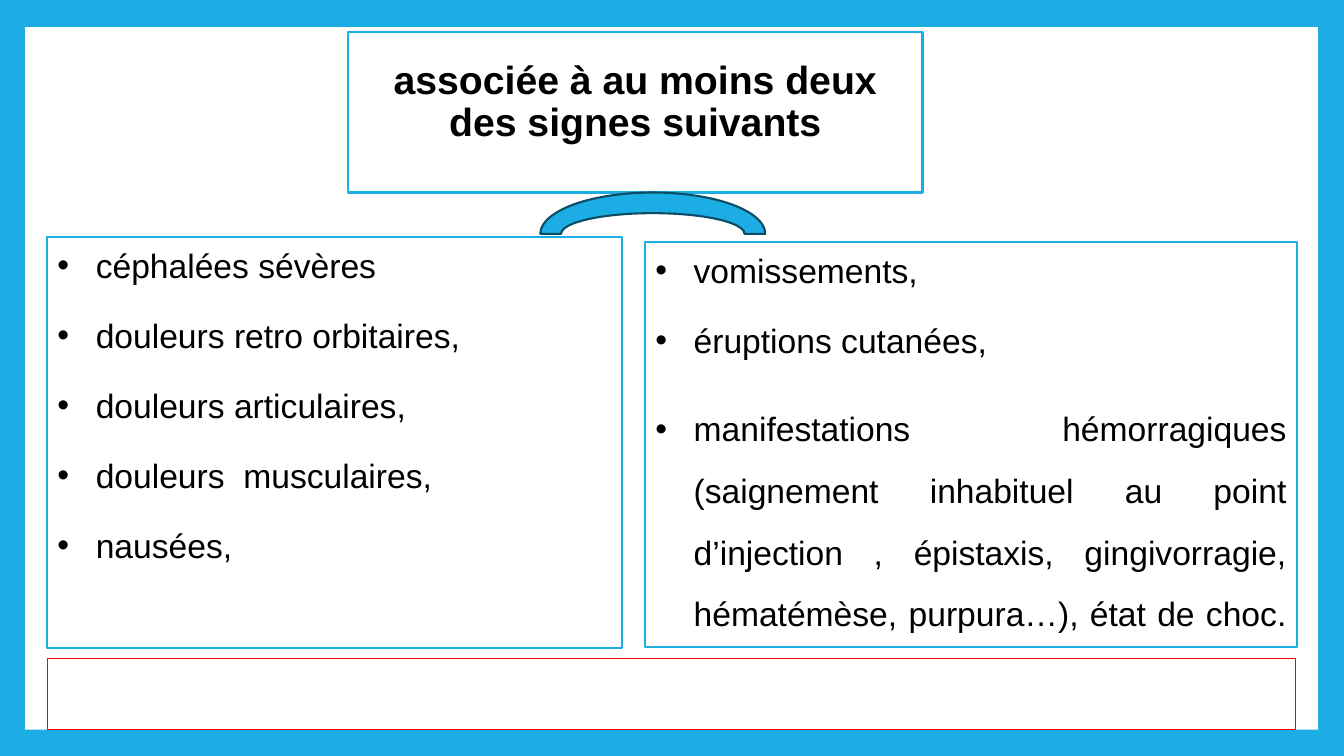
from lxml import etree
from pptx import Presentation, util as u
from pptx.dml.color import RGBColor
from pptx.enum import shapes, text
from pptx.oxml import ns

BLUE = RGBColor(0x1C, 0xAD, 0xE4)
NAVY = RGBColor(0x0C, 0x4C, 0x64)
RED = RGBColor(0xFF, 0x00, 0x00)
WHITE = RGBColor(0xFF, 0xFF, 0xFF)
BLACK = RGBColor(0x00, 0x00, 0x00)

LEFT_SIGNS = [
    "céphalées sévères",
    "douleurs retro orbitaires,",
    "douleurs articulaires,",
    "douleurs  musculaires,",
    "nausées,",
]
RIGHT_SIGNS = ["vomissements,", "éruptions cutanées,"]
BLEEDING_SIGNS = (
    "manifestations hémorragiques (saignement inhabituel au point d’injection , "
    "épistaxis, gingivorragie, hématémèse, purpura…), état de choc. "
)


def write(para, words, size=24, bold=False, align=text.PP_ALIGN.JUSTIFY,
          spacing=1.07, before=0, after=0):
    para.alignment = align
    para.line_spacing = spacing
    para.space_before, para.space_after = u.Pt(before), u.Pt(after)
    span = para.add_run()
    span.text = words
    span.font.name, span.font.size, span.font.bold = "Arial", u.Pt(size), bold
    span.font.color.rgb = BLACK


def add_bullet(para, indent=0.38):
    props = para._p.get_or_add_pPr()
    props.set("marL", str(u.Inches(indent)))
    props.set("indent", str(-u.Inches(indent)))
    color = etree.SubElement(props, ns.qn("a:buClr"))
    etree.SubElement(color, ns.qn("a:srgbClr"), val=str(BLACK))
    etree.SubElement(props, ns.qn("a:buFont"), typeface="Arial")
    etree.SubElement(props, ns.qn("a:buChar"), char="•")


class SignsPage:
    def __init__(self, deck):
        self.page = deck.slides.add_slide(deck.slide_layouts[3])
        background = self.page.background.fill
        background.solid()
        background.fore_color.rgb = BLUE

    def paint(self, box, fill=None, line=None, width=1.5):
        if fill is None:
            box.fill.background()
        else:
            box.fill.solid()
            box.fill.fore_color.rgb = fill
        if line is None:
            box.line.fill.background()
        else:
            box.line.color.rgb = line
            box.line.width = u.Pt(width)

    def shape(self, kind, place, **style):
        box = self.page.shapes.add_shape(kind, *map(u.Inches, place))
        box.shadow.inherit = False
        self.paint(box, **style)
        return box

    def backdrop(self, place):
        """Add a white panel behind everything else."""
        panel = self.shape(shapes.MSO_SHAPE.RECTANGLE, place, fill=WHITE).element
        panel.getparent().insert(2, panel)

    def placeholder(self, index, place, anchor):
        box = self.page.placeholders[index]
        box.left, box.top, box.width, box.height = map(u.Inches, place)
        self.paint(box, fill=WHITE, line=BLUE)
        frame = box.text_frame
        frame.word_wrap = True
        frame.auto_size = text.MSO_AUTO_SIZE.NONE
        frame.vertical_anchor = anchor
        return frame

    def title(self, words, place):
        frame = self.placeholder(0, place, text.MSO_ANCHOR.BOTTOM)
        frame.margin_bottom = u.Inches(0.47)
        write(frame.paragraphs[0], words, size=28, bold=True,
              align=text.PP_ALIGN.CENTER, spacing=0.9)

    def bullets(self, index, items, place):
        """Fill a body placeholder with (words, format) items."""
        frame = self.placeholder(index, place, text.MSO_ANCHOR.TOP)
        for number, (words, style) in enumerate(items):
            para = frame.add_paragraph() if number else frame.paragraphs[0]
            write(para, words, before=14, **style)
            add_bullet(para)


def main():
    deck = Presentation()
    deck.slide_width, deck.slide_height = u.Inches(13.33), u.Inches(7.5)
    signs = SignsPage(deck)
    signs.backdrop((0.25, 0.27, 12.82, 6.97))
    signs.title("associée à au moins deux des signes suivants",
                (3.45, 0.32, 5.7, 1.59))
    short = {"after": 5.2}
    signs.bullets(1, [(sign, short) for sign in LEFT_SIGNS],
                  (0.47, 2.35, 5.7, 4.08))
    signs.bullets(2, [(sign, short) for sign in RIGHT_SIGNS]
                  + [(BLEEDING_SIGNS, {"spacing": 1.53, "after": 0.2})],
                  (6.4, 2.4, 6.46, 4.02))
    signs.shape(shapes.MSO_SHAPE.RECTANGLE, (0.47, 6.53, 12.38, 0.71),
                line=RED, width=0.75)
    signs.shape(shapes.MSO_SHAPE.BLOCK_ARC, (5.36, 1.91, 2.23, 0.82),
                fill=BLUE, line=NAVY)
    deck.save("out.pptx")


if __name__ == "__main__":
    main()
